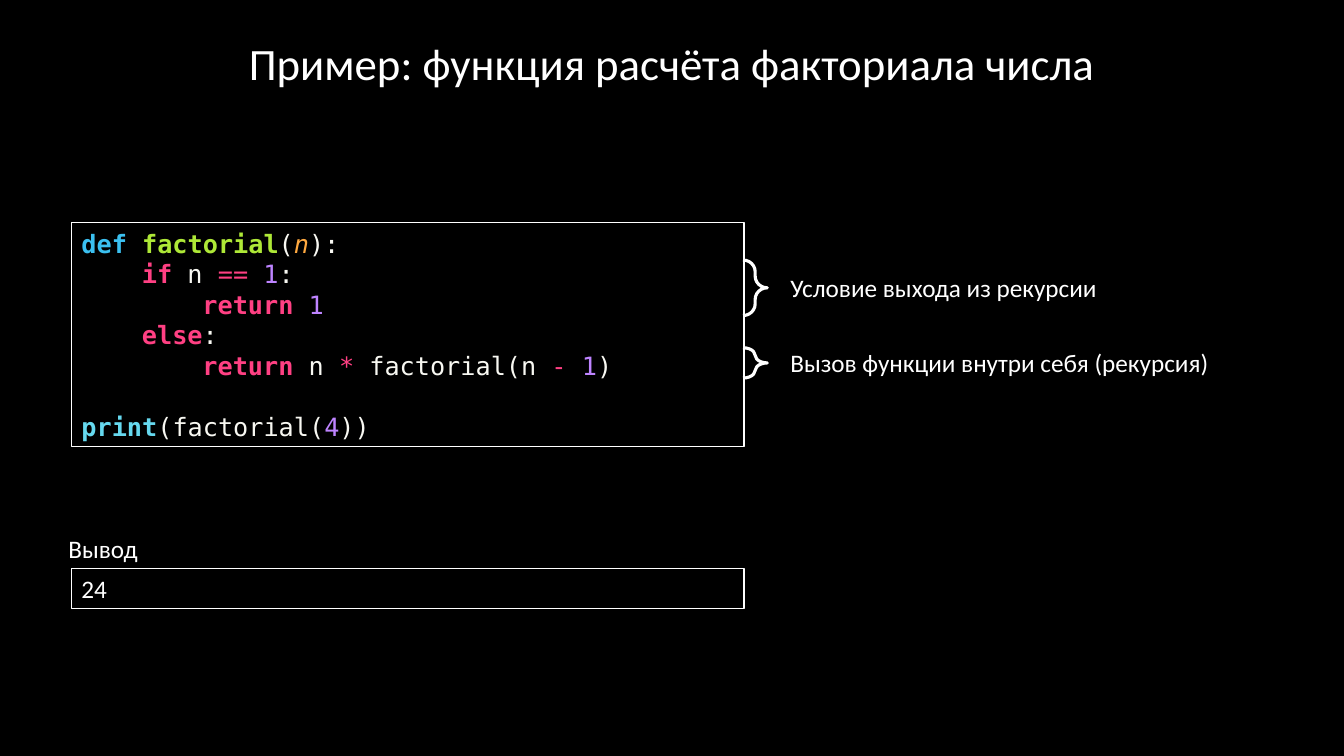
from pptx import Presentation
from pptx.dml.color import RGBColor
from pptx.enum.shapes import MSO_SHAPE
from pptx.enum.text import MSO_ANCHOR, PP_ALIGN
from pptx.util import Inches, Pt

RECTANGLE, LEFT_BRACE = MSO_SHAPE.RECTANGLE, MSO_SHAPE.LEFT_BRACE
MIDDLE = MSO_ANCHOR.MIDDLE
LEFT, CENTER = PP_ALIGN.LEFT, PP_ALIGN.CENTER

COLORS = {
    "background": "000000",
    "white": "FFFFFF",
    "plain": "F8F8F2",
    "definition": "3BC0F0",
    "function": "AEE837",
    "parameter": "FFA940",
    "keyword": "FF4083",
    "operator": "FF4083",
    "number": "BE84FF",
    "builtin": "66D9EF",
}
BOLD = {"definition", "function", "keyword", "builtin"}
TEXT_FONT, CODE_FONT = "Calibri", "DejaVu Sans Mono"
CODE_LINE = Pt(21.8)
INDENT = 0.6
BOX_LEFT, BOX_WIDTH = 0.71, 6.67
BRACE_LEFT, NOTE_LEFT = 7.37, 7.74

# Each line: indent level, blank lines before it, (text, role) tokens
CODE = [
    (0, 0, [("def ", "definition"), ("factorial", "function"), ("(", "plain"),
            ("n", "parameter"), ("):", "plain")]),
    (1, 0, [("if", "keyword"), (" n ", "plain"), ("== ", "operator"),
            ("1", "number"), (":", "plain")]),
    (2, 0, [("return ", "keyword"), ("1", "number")]),
    (1, 0, [("else", "keyword"), (":", "plain")]),
    (2, 0, [("return", "keyword"), (" n ", "plain"), ("*", "operator"),
            (" factorial(n ", "plain"), ("- ", "operator"), ("1", "number"),
            (")", "plain")]),
    (0, 1, [("print", "builtin"), ("(factorial(", "plain"), ("4", "number"),
            ("))", "plain")]),
]

# Brace top, brace height, note top, note text
NOTES = [
    (2.58, 0.55, 2.65, "Условие выхода из рекурсии"),
    (3.45, 0.3, 3.4, "Вызов функции внутри себя (рекурсия)"),
]


def color(name):
    return RGBColor.from_string(COLORS[name])


def style_run(run, font_name, size, color_name):
    run.font.name = font_name
    run.font.size = Pt(size)
    run.font.color.rgb = color(color_name)


def write_text(shape, text, size=18, align=LEFT):
    frame = shape.text_frame
    frame.word_wrap = True
    frame.text = text
    paragraph = frame.paragraphs[0]
    paragraph.alignment = align
    style_run(paragraph.runs[0], TEXT_FONT, size, "white")


def add_label(slide, left, top, width, height, text, **style):
    label = slide.shapes.add_textbox(
        Inches(left), Inches(top), Inches(width), Inches(height))
    write_text(label, text, **style)


def add_outline(slide, kind, left, top, width, height, line_width):
    """Add an unfilled shape with a white line."""
    shape = slide.shapes.add_shape(
        kind, Inches(left), Inches(top), Inches(width), Inches(height))
    shape.shadow.inherit = False
    shape.fill.background()
    shape.line.color.rgb = color("white")
    shape.line.width = Pt(line_width)
    return shape


def add_box(slide, top, height):
    box = add_outline(slide, RECTANGLE, BOX_LEFT, top, BOX_WIDTH, height, 0.75)
    box.text_frame.word_wrap = True
    box.text_frame.vertical_anchor = MIDDLE
    return box


def write_code(box):
    frame = box.text_frame
    for index, (level, blank_lines, tokens) in enumerate(CODE):
        paragraph = frame.add_paragraph() if index else frame.paragraphs[0]
        paragraph.alignment = LEFT
        paragraph.line_spacing = CODE_LINE
        paragraph.space_before = CODE_LINE * blank_lines
        properties = paragraph._p.get_or_add_pPr()
        properties.set("marL", str(Inches(level * INDENT)))
        properties.set("indent", "0")
        for text, role in tokens:
            run = paragraph.add_run()
            run.text = text
            style_run(run, CODE_FONT, 18, role)
            run.font.bold = role in BOLD
            run.font.italic = role == "parameter"


def add_note(slide, brace_top, brace_height, note_top, text):
    brace = add_outline(
        slide, LEFT_BRACE, BRACE_LEFT, brace_top, 0.24, brace_height, 2.25)
    brace.rotation = 180
    brace.adjustments[0] = 0.48
    brace.adjustments[1] = 0.5
    add_label(slide, NOTE_LEFT, note_top, 4.98, 0.4, text)


def main():
    presentation = Presentation()
    presentation.slide_width = Inches(13.33)
    presentation.slide_height = Inches(7.5)
    slide = presentation.slides.add_slide(presentation.slide_layouts[6])
    slide.background.fill.solid()
    slide.background.fill.fore_color.rgb = color("background")

    add_label(slide, 1.69, 0.31, 9.95, 0.64,
              "Пример: функция расчёта факториала числа", size=32, align=CENTER)
    write_code(add_box(slide, 2.21, 2.22))
    write_text(add_box(slide, 5.64, 0.4), "24")
    add_label(slide, 0.58, 5.24, 1.41, 0.4, "Вывод")
    for note in NOTES:
        add_note(slide, *note)

    presentation.save("out.pptx")


if __name__ == "__main__":
    main()
